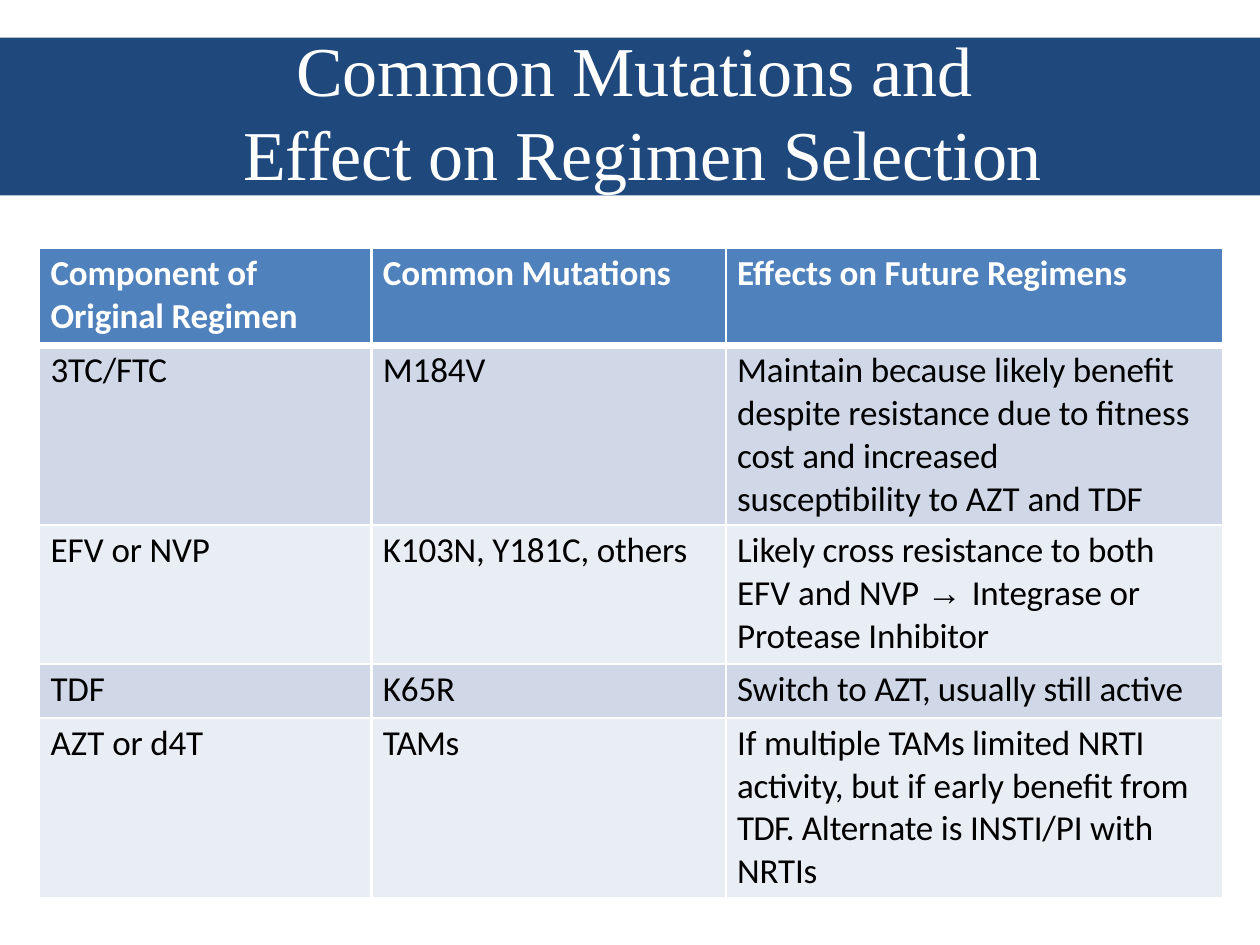
from typing import NamedTuple

from lxml.etree import SubElement
from pptx import Presentation
from pptx.dml.color import RGBColor
from pptx.enum.shapes import MSO_SHAPE
from pptx.enum.text import MSO_ANCHOR, MSO_AUTO_SIZE, PP_ALIGN
from pptx.oxml.ns import qn
from pptx.util import Cm, Pt

NAVY, BLUE, WHITE, BLACK = "1F497D", "4F81BD", "FFFFFF", "000000"
ROW_FILLS = ["D0D8E8", "E9EDF4"]
COLUMN_WIDTHS = [6.7, 7.14, 10.03]
ROW_HEIGHTS = [1.96, 3.63, 2.79, 1.09, 3.63]
THIN, THICK = 1.5, 4.25


class Piece(NamedTuple):
    """A stretch of text with its letter spacing in points and its font."""
    text: str
    spacing: float = -0.1
    font: str = "Calibri"


TITLE = [
    Piece("Common Mutations and \nEffect on ", font="Times New Roman"),
    Piece("Regimen ", -0.2, "Times New Roman"),
    Piece("Selection", font="Times New Roman"),
]
ROWS = [
    [
        [Piece("Component of \nOriginal Regimen")],
        [Piece("Common Mutations")],
        [Piece("Effects on Future Regimens")],
    ],
    [
        [Piece("3TC/FTC")],
        [Piece("M184V")],
        [Piece("Maintain because likely benefit \ndespite resistance due to "),
         Piece("fitness \n", 0),
         Piece("cost and increased \nsusceptibility to "),
         Piece("AZT ", 0),
         Piece("and TDF")],
    ],
    [
        [Piece("EFV ", 0), Piece("or NVP")],
        [Piece("K103N, Y181C, others")],
        [Piece("Likely cross resistance to both \n"),
         Piece("EFV ", 0),
         Piece("and NVP "),
         Piece("→ ", 0, "Arial"),
         Piece("Integrase or \nProtease Inhibitor")],
    ],
    [
        [Piece("TDF")],
        [Piece("K65R")],
        [Piece("Switch to "), Piece("AZT, ", -0.5), Piece("usually still active")],
    ],
    [
        [Piece("AZT ", 0), Piece("or d4T")],
        [Piece("TAMs", -0.4)],
        [Piece("If multiple "),
         Piece("TAMs ", -0.4),
         Piece("limited NRTI \n"),
         Piece("activity, ", -0.2),
         Piece("but "),
         Piece("if early ", 0),
         Piece("benefit from \n"),
         Piece("TDF. ", -0.5),
         Piece("Alternate is INSTI/PI "),
         Piece("with \n", 0),
         Piece("NRTIs")],
    ],
]


def color(value):
    """Turn a hex string into a colour."""
    return RGBColor.from_string(value)


def add_pieces(paragraph, pieces, size, text_color, bold=False):
    """Add the pieces as runs, breaking the line at each newline."""
    for piece in pieces:
        for index, text in enumerate(piece.text.split("\n")):
            if index:
                paragraph.add_line_break()
            if not text:
                continue
            run = paragraph.add_run()
            run.text = text
            run.font.name = piece.font
            run.font.size = Pt(size)
            run.font.bold = bold
            run.font.color.rgb = color(text_color)
            run.font._element.set("spc", str(round(piece.spacing * 100)))


def add_band(slide):
    """Put the full-width title band behind everything else."""
    band = slide.shapes.add_shape(
        MSO_SHAPE.RECTANGLE, 0, Cm(0.76), Cm(25.4), Cm(3.18))
    band.shadow.inherit = False
    band.fill.solid()
    band.fill.fore_color.rgb = color(NAVY)
    band.line.fill.background()
    slide.shapes._spTree.insert(2, band._element)


def format_title(title):
    """Place and fill the title placeholder."""
    title.left, title.top = Cm(3.07), Cm(0.51)
    title.width, title.height = Cm(19.25), Cm(3.45)
    frame = title.text_frame
    frame.word_wrap = True
    frame.auto_size = MSO_AUTO_SIZE.NONE
    frame.vertical_anchor = MSO_ANCHOR.TOP
    frame.margin_left = frame.margin_right = frame.margin_bottom = 0
    frame.margin_top = Cm(0.03)
    paragraph = frame.paragraphs[0]
    paragraph.alignment = PP_ALIGN.LEFT
    paragraph.space_before = Pt(1)
    paragraph.line_spacing = Pt(48)
    properties = paragraph._p.get_or_add_pPr()
    properties.set("marL", str(Cm(1.83)))
    properties.set("indent", str(Cm(1.07)))
    add_pieces(paragraph, TITLE, 40, WHITE)


def set_borders(cell, top, bottom):
    """Draw white borders on all four sides of a cell."""
    properties = cell._tc.get_or_add_tcPr()
    sides = {"a:lnL": THIN, "a:lnR": THIN, "a:lnT": top, "a:lnB": bottom}
    for side, width in sides.items():
        line = SubElement(properties, qn(side), w=str(Pt(width)))
        fill = SubElement(line, qn("a:solidFill"))
        SubElement(fill, qn("a:srgbClr"), val=WHITE)


def format_cell(cell, pieces, row_index):
    """Fill and style one cell according to its row."""
    is_header = row_index == 0
    set_borders(cell, THICK if row_index == 1 else THIN,
                THICK if is_header else THIN)
    cell.fill.solid()
    fill = BLUE if is_header else ROW_FILLS[(row_index - 1) % 2]
    cell.fill.fore_color.rgb = color(fill)
    cell.margin_left, cell.margin_top = Cm(0.23), Cm(0.08)
    cell.margin_right = cell.margin_bottom = 0
    add_pieces(cell.text_frame.paragraphs[0], pieces, 20,
               WHITE if is_header else BLACK, is_header)


def add_mutation_table(slide):
    """Add the table of mutations and their effects."""
    table = slide.shapes.add_table(
        len(ROWS), len(COLUMN_WIDTHS), Cm(0.79), Cm(5),
        Cm(sum(COLUMN_WIDTHS)), Cm(sum(ROW_HEIGHTS))).table
    for column, width in zip(table.columns, COLUMN_WIDTHS):
        column.width = Cm(width)
    for row_index, (row, height) in enumerate(zip(table.rows, ROW_HEIGHTS)):
        row.height = Cm(height)
        for cell, pieces in zip(row.cells, ROWS[row_index]):
            format_cell(cell, pieces, row_index)


def main():
    """Build and save the slide."""
    presentation = Presentation()
    presentation.slide_width, presentation.slide_height = Cm(25.4), Cm(19.05)
    slide = presentation.slides.add_slide(presentation.slide_layouts[5])
    add_band(slide)
    format_title(slide.shapes.title)
    add_mutation_table(slide)
    presentation.save("out.pptx")


if __name__ == "__main__":
    main()
